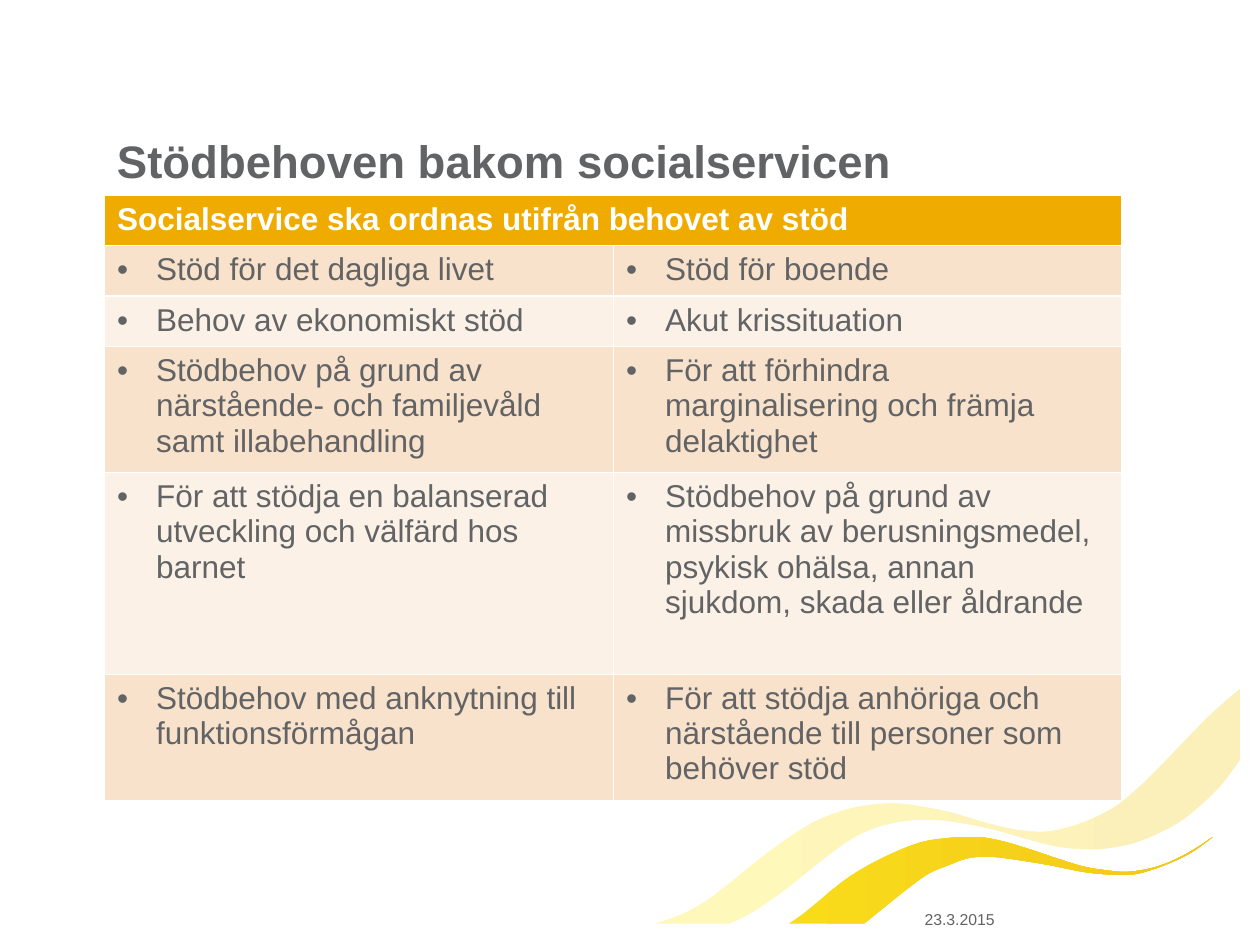
"""Build a slide with a table of support needs above two decorative waves."""
from dataclasses import dataclass

from lxml import etree
from pptx import Presentation
from pptx.dml.color import RGBColor
from pptx.enum.text import MSO_ANCHOR
from pptx.oxml.ns import qn
from pptx.util import Inches, Pt

BOTTOM = MSO_ANCHOR.BOTTOM
FONT = "Arial"
GREY = RGBColor(0x61, 0x63, 0x65)
WHITE = RGBColor(0xFF, 0xFF, 0xFF)
AMBER = RGBColor(0xF0, 0xAB, 0x00)
PEACH = RGBColor(0xF9, 0xE2, 0xCB)
CREAM = RGBColor(0xFC, 0xF1, 0xE7)
GOLD_START = RGBColor(0xF8, 0xDC, 0x1A)
GOLD_END = RGBColor(0xF4, 0xC6, 0x1A)
PALE_START = RGBColor(0xFE, 0xF8, 0xBA)
PALE_END = RGBColor(0xFC, 0xF0, 0xBA)
CURVE_STEPS = 5
BULLET_INDENT = 0.31

Point = tuple[float, float]


@dataclass(frozen=True)
class Wave:
    upper: list[Point]
    lower: list[Point]
    start: RGBColor
    end: RGBColor


WAVES = [
    Wave(
        [(6.26, 7.33), (6.39, 7.24), (6.67, 7.01), (6.87, 6.88), (7.11, 6.76),
         (7.33, 6.68), (7.54, 6.65), (7.73, 6.64), (7.93, 6.67), (8.14, 6.73),
         (8.41, 6.82), (8.61, 6.88), (8.8, 6.91), (8.95, 6.92), (9.14, 6.89),
         (9.31, 6.83), (9.48, 6.74), (9.63, 6.64)],
        [(9.63, 6.64), (9.48, 6.75), (9.33, 6.83), (9.15, 6.9), (8.99, 6.94),
         (8.8, 6.94), (8.6, 6.92), (8.35, 6.87), (8.11, 6.83), (7.87, 6.8),
         (7.69, 6.81), (7.52, 6.87), (7.36, 6.94), (7.17, 7.08), (6.86, 7.33)],
        GOLD_START, GOLD_END),
    Wave(
        [(5.2, 7.33), (5.4, 7.26), (5.59, 7.16), (5.79, 7.01), (6.05, 6.8),
         (6.27, 6.64), (6.47, 6.52), (6.67, 6.44), (6.83, 6.4), (7, 6.38),
         (7.16, 6.38), (7.36, 6.41), (7.55, 6.45), (7.82, 6.53), (8.03, 6.58),
         (8.19, 6.6), (8.32, 6.6), (8.5, 6.56), (8.69, 6.49), (8.87, 6.39),
         (9.06, 6.23), (9.27, 6.02), (9.55, 5.73), (9.7, 5.59), (9.84, 5.47)],
        [(9.84, 6.03), (9.7, 6.22), (9.55, 6.37), (9.38, 6.51), (9.2, 6.61),
         (9, 6.69), (8.8, 6.73), (8.62, 6.74), (8.4, 6.72), (8.19, 6.67),
         (7.91, 6.59), (7.68, 6.54), (7.46, 6.51), (7.24, 6.51), (7.05, 6.54),
         (6.87, 6.6), (6.71, 6.69), (6.52, 6.83), (6.26, 7.04), (6.08, 7.17),
         (5.92, 7.27), (5.79, 7.33)],
        PALE_START, PALE_END),
]
TABLE_TITLE = "Socialservice ska ordnas utifrån behovet av stöd"
NEEDS = [
    ("Stöd för det dagliga livet", "Stöd för boende"),
    ("Behov av ekonomiskt stöd", "Akut krissituation"),
    ("Stödbehov på grund av närstående- och familjevåld samt illabehandling",
     "För att förhindra marginalisering och främja delaktighet"),
    ("För att stödja en balanserad utveckling och välfärd hos barnet",
     "Stödbehov på grund av missbruk av berusningsmedel, psykisk ohälsa, "
     "annan sjukdom, skada eller åldrande"),
    ("Stödbehov med anknytning till funktionsförmågan",
     "För att stödja anhöriga och närstående till personer som behöver stöd"),
]
COLUMN_WIDTHS = [4.04, 4.03]
ROW_HEIGHTS = [0.4, 0.4, 0.4, 1, 1.6, 1]


def blend(before: float, first: float, second: float, after: float, t: float) -> float:
    return 0.5 * (2 * first + (second - before) * t
                  + (2 * before - 5 * first + 4 * second - after) * t ** 2
                  + (3 * first - before - 3 * second + after) * t ** 3)


def smooth_curve(points: list[Point]) -> list[Point]:
    padded = [points[0], *points, points[-1]]
    curve = [
        tuple(blend(*axis, step / CURVE_STEPS) for axis in zip(*padded[i:i + 4]))
        for i in range(len(points) - 1)
        for step in range(CURVE_STEPS)
    ]
    return [*curve, points[-1]]


def draw_wave(page, wave: Wave) -> None:
    outline = [(Inches(x), Inches(y))
               for x, y in smooth_curve(wave.upper) + smooth_curve(wave.lower)]
    builder = page.shapes.build_freeform(*outline[0])
    builder.add_line_segments(outline[1:], close=True)
    shape = builder.convert_to_shape()
    shape.shadow.inherit = False
    shape.line.fill.background()
    shape.fill.gradient()
    shape.fill.gradient_angle = 0
    for stop, color in zip(shape.fill.gradient_stops, (wave.start, wave.end)):
        stop.color.rgb = color


def write_text(frame, text: str, *, size: float, color: RGBColor = GREY,
               bold: bool = False, bullet: bool = False) -> None:
    para = frame.paragraphs[0]
    if bullet:
        properties = para._p.get_or_add_pPr()
        properties.set("marL", str(Inches(BULLET_INDENT)))
        properties.set("indent", str(-Inches(BULLET_INDENT)))
        etree.SubElement(properties, qn("a:buFont"), typeface=FONT)
        etree.SubElement(properties, qn("a:buChar"), char="•")
    span = para.add_run()
    span.text = text
    span.font.name = FONT
    span.font.size = Pt(size)
    span.font.bold = bold
    span.font.color.rgb = color


def add_label(page, text: str, *, left: float, top: float, width: float,
              height: float, size: float, bold: bool = False) -> None:
    box = page.shapes.add_textbox(
        Inches(left), Inches(top), Inches(width), Inches(height))
    box.text_frame.word_wrap = True
    box.text_frame.vertical_anchor = BOTTOM
    write_text(box.text_frame, text, size=size, bold=bold)


def fill_cell(cell, color: RGBColor) -> None:
    cell.fill.solid()
    cell.fill.fore_color.rgb = color


def add_needs_table(page) -> None:
    table = page.shapes.add_table(
        len(ROW_HEIGHTS), len(COLUMN_WIDTHS), Inches(0.83), Inches(1.55),
        Inches(sum(COLUMN_WIDTHS)), Inches(sum(ROW_HEIGHTS))).table
    for column, width in zip(table.columns, COLUMN_WIDTHS):
        column.width = Inches(width)
    for row, height in zip(table.rows, ROW_HEIGHTS):
        row.height = Inches(height)
    header = table.cell(0, 0)
    header.merge(table.cell(0, 1))
    fill_cell(header, AMBER)
    write_text(header.text_frame, TABLE_TITLE, size=18, color=WHITE, bold=True)
    for row_index, needs in enumerate(NEEDS, start=1):
        for column_index, need in enumerate(needs):
            cell = table.cell(row_index, column_index)
            fill_cell(cell, PEACH if row_index % 2 else CREAM)
            write_text(cell.text_frame, need, size=18, bullet=True)


def main() -> None:
    deck = Presentation()
    deck.slide_width, deck.slide_height = Inches(10), Inches(7.5)
    page = deck.slides.add_slide(deck.slide_layouts[6])
    for wave in WAVES:
        draw_wave(page, wave)
    add_label(page, "Stödbehoven bakom socialservicen", left=0.83, top=0.3,
              width=8.35, height=1.24, size=26, bold=True)
    add_needs_table(page)
    add_label(page, "23.3.2015", left=7.24, top=7.18, width=2.6, height=0.24, size=9)
    deck.save("out.pptx")


if __name__ == "__main__":
    main()
